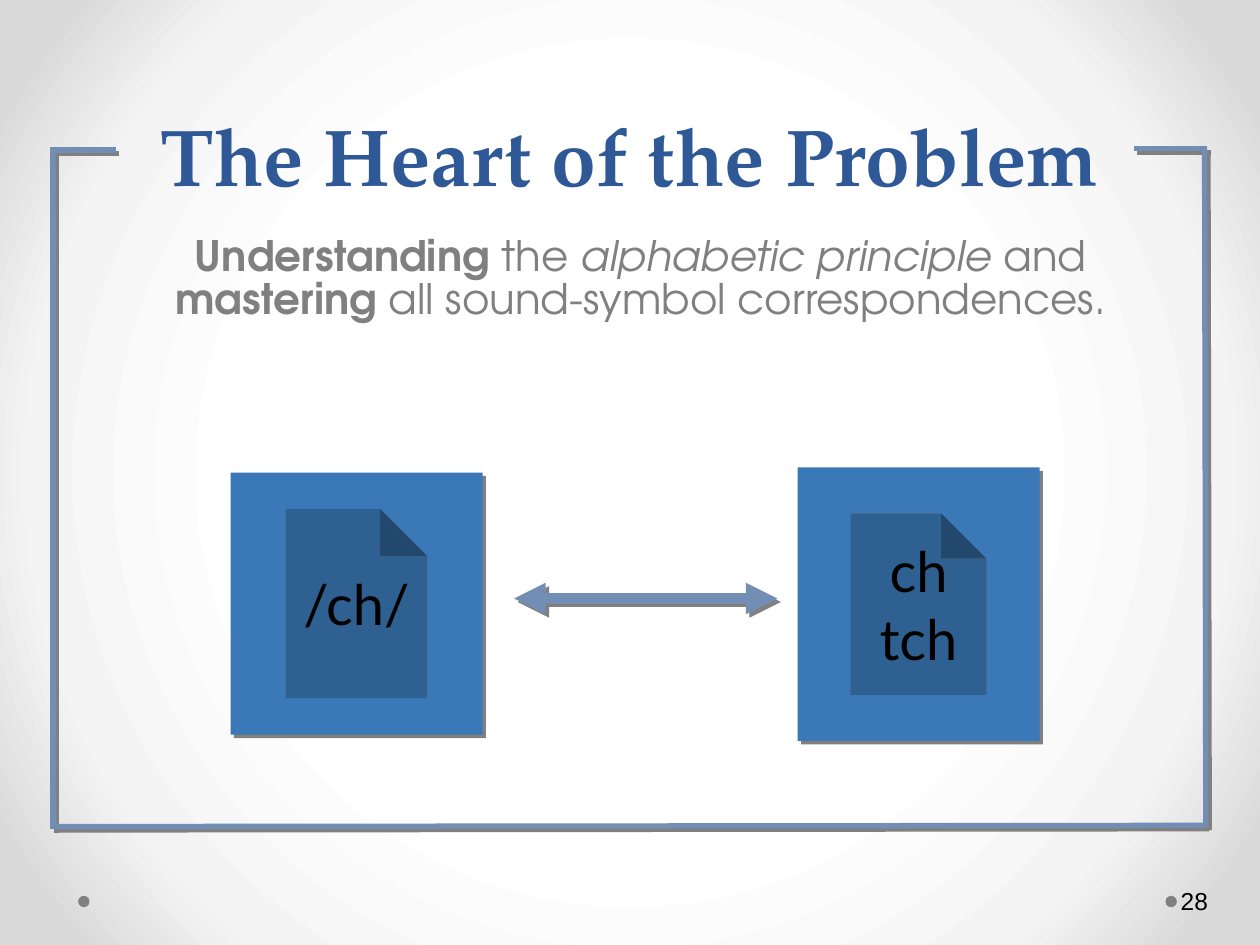
from dataclasses import dataclass

from lxml.etree import SubElement
from pptx import Presentation
from pptx.dml.color import RGBColor
from pptx.enum.shapes import MSO_CONNECTOR, MSO_SHAPE
from pptx.enum.text import MSO_ANCHOR, MSO_AUTO_SIZE, PP_ALIGN
from pptx.oxml import parse_xml
from pptx.oxml.ns import nsdecls, qn
from pptx.util import Inches, Pt


@dataclass
class Theme:
    blue: str = "3B78B7"
    line: str = "728EB5"
    gray: str = "808080"
    title = dict(name="TeX Gyre Pagella", size=Pt(46), bold=True, color="2F5897")
    body = dict(name="TeX Gyre Adventor", size=Pt(24), color="808080")
    card = dict(name="Lato", size=Pt(32), color="000000")
    page = dict(name="Arial", size=Pt(14), color="000000")
    thin = Pt(3)
    thick = Pt(6)


theme = Theme()


def write(para, text, form):
    run = para.add_run()
    run.text = text
    for key, value in form.items():
        if key == "color":
            run.font.color.rgb = RGBColor.from_string(value)
        else:
            setattr(run.font, key, value)


def shade(shape):
    shape._element.spPr.append(parse_xml(
        f'<a:effectLst {nsdecls("a")}>'
        '<a:outerShdw dist="35560" dir="2700000" algn="ctr" rotWithShape="0">'
        f'<a:srgbClr val="{theme.gray}"/></a:outerShdw></a:effectLst>'))


deck = Presentation()
deck.slide_width, deck.slide_height = Inches(10), Inches(7.5)
slide = deck.slides.add_slide(deck.slide_layouts[1])
shapes = slide.shapes

stops = "".join(
    f'<a:gs pos="{spot * 1000}"><a:srgbClr val="{color}"/></a:gs>'
    for spot, color in ((50, "FFFFFF"), (76, "F4F4F4"), (92, "DADADA")))
slide._element.cSld.insert(0, parse_xml(
    f'<p:bg {nsdecls("p", "a")}><p:bgPr><a:gradFill rotWithShape="1">'
    f'<a:gsLst>{stops}</a:gsLst><a:path path="circle">'
    '<a:fillToRect l="50000" t="50000" r="50000" b="50000"/></a:path>'
    '</a:gradFill><a:effectLst/></p:bgPr></p:bg>'))

for left in (9.25, 0.62):
    dot = shapes.add_shape(MSO_SHAPE.OVAL, Inches(left), Inches(7.11), Inches(0.09), Inches(0.09))
    dot.shadow.inherit = False
    dot.fill.solid()
    dot.fill.fore_color.rgb = RGBColor.from_string(theme.gray)
    dot.line.fill.background()

page = shapes.add_textbox(Inches(9.34), Inches(6.95), Inches(0.61), Inches(0.4)).text_frame
for key, value in dict(word_wrap=True, vertical_anchor=MSO_ANCHOR.MIDDLE,
                       margin_left=Inches(0.03), margin_right=Inches(0.05)).items():
    setattr(page, key, value)
write(page.paragraphs[0], "28", theme.page)

title, body = shapes.title, slide.placeholders[1]
for holder, place, anchor, space in (
        (title, (0.33, 0.58, 9.33, 1.08), MSO_ANCHOR.BOTTOM, Pt(58)),
        (body, (0.92, 1.83, 8.33, 1.83), MSO_ANCHOR.TOP, 0.85)):
    for key, value in zip(("left", "top", "width", "height"), place):
        setattr(holder, key, Inches(value))
    holder.text_frame.auto_size = MSO_AUTO_SIZE.NONE
    holder.text_frame.vertical_anchor = anchor
    para = holder.text_frame.paragraphs[0]
    para.alignment = PP_ALIGN.CENTER
    para.line_spacing = space

write(title.text_frame.paragraphs[0], "The Heart of the Problem", theme.title)
para = body.text_frame.paragraphs[0]
props = para._p.get_or_add_pPr()
props.set("marL", "0")
props.set("indent", "0")
SubElement(props, qn("a:buNone"))
for text, form in (
        ("Understanding", dict(bold=True)),
        (" the ", {}),
        ("alphabetic principle ", dict(italic=True)),
        ("and ", {}),
        ("mastering", dict(bold=True)),
        (" all sound-symbol correspondences.", {})):
    write(para, text, theme.body | form)

for place, lines in (
        ((1.83, 3.75, 2, 2.08), ("/ch/",)),
        ((6.33, 3.71, 1.92, 2.17), ("ch", "tch"))):
    card = shapes.add_shape(MSO_SHAPE.ACTION_BUTTON_DOCUMENT, *map(Inches, place))
    card.fill.solid()
    card.fill.fore_color.rgb = RGBColor.from_string(theme.blue)
    card.line.fill.background()
    shade(card)
    frame = card.text_frame
    frame.word_wrap = False
    frame.vertical_anchor = MSO_ANCHOR.MIDDLE
    for rank, text in enumerate(lines):
        para = frame.add_paragraph() if rank else frame.paragraphs[0]
        para.alignment = PP_ALIGN.CENTER
        write(para, text, theme.card)

border = shapes.add_group_shape()
for home, ends, width in (
        (shapes, (4.08, 4.75, 6.17, 4.75), theme.thick),
        (border.shapes, (9, 1.18, 9.58, 1.18), theme.thin),
        (border.shapes, (9.57, 6.56, 9.56, 1.17), theme.thin),
        (border.shapes, (0.42, 6.58, 0.42, 1.17), theme.thin),
        (border.shapes, (0.41, 1.19, 0.92, 1.19), theme.thin),
        (border.shapes, (0.42, 6.56, 9.57, 6.55), theme.thin)):
    line = home.add_connector(MSO_CONNECTOR.STRAIGHT, *map(Inches, ends))
    line.line.color.rgb = RGBColor.from_string(theme.line)
    line.line.width = width
    if home is shapes:
        for tip in ("a:headEnd", "a:tailEnd"):
            SubElement(line.line._get_or_add_ln(), qn(tip), type="triangle")
    shade(line)

deck.save("out.pptx")
